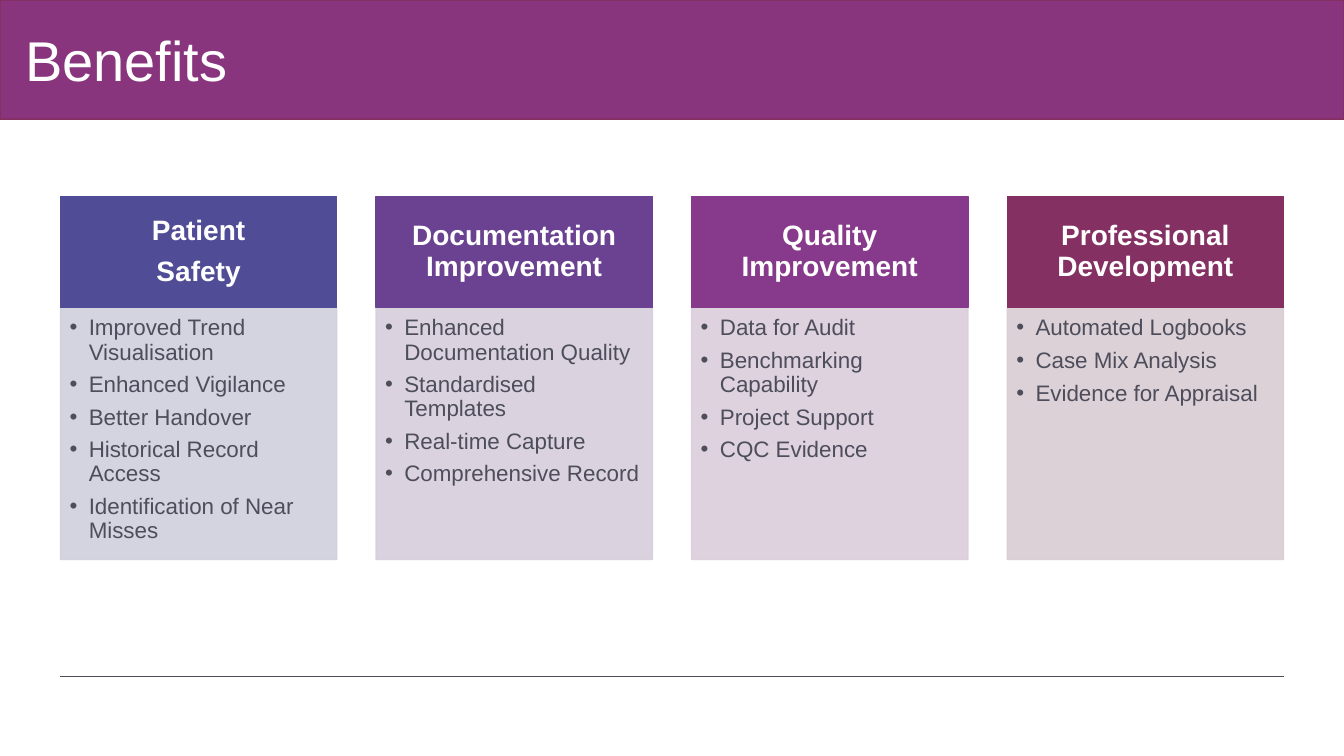
from lxml import etree
from pptx import Presentation
from pptx import util as u
from pptx.dml import color
from pptx.enum import shapes, text
from pptx.oxml import ns


class Theme:
    font = "Arial"
    title_size, heading_size, list_size = 40, 20, 16
    white, ink = "FFFFFF", "4D4D5B"
    banner, banner_edge = "89357E", "853063"
    list_opacity = 90


def paint(shape, fill, edge, insets, anchor, opacity=100):
    shape.fill.solid()
    shape.fill.fore_color.rgb = color.RGBColor.from_string(fill)
    shape.line.color.rgb = color.RGBColor.from_string(edge)
    shape.line.width = u.Pt(1)
    if opacity < 100:
        for tint in shape._element.spPr.iter(ns.qn("a:srgbClr")):
            etree.SubElement(tint, ns.qn("a:alpha"), val=str(opacity * 1000))
    frame = shape.text_frame
    frame.word_wrap = True
    frame.auto_size = text.MSO_AUTO_SIZE.NONE
    frame.vertical_anchor = anchor
    frame.margin_left, frame.margin_top, frame.margin_right, frame.margin_bottom = map(u.Inches, insets)


def write(frame, lines, size, ink, align, bold=False, spacing=0.9, after=0, bullet=False):
    for number, line in enumerate(lines):
        paragraph = frame.add_paragraph() if number else frame.paragraphs[0]
        if bullet:
            properties = paragraph._p.get_or_add_pPr()
            properties.set("marL", str(u.Inches(0.19)))
            properties.set("indent", str(-u.Inches(0.19)))
            etree.SubElement(properties, ns.qn("a:buChar"), char="•")
        paragraph.alignment = align
        paragraph.line_spacing = spacing
        paragraph.space_before = u.Pt(0)
        paragraph.space_after = u.Pt(after)
        run = paragraph.add_run()
        run.text = line
        run.font.name = Theme.font
        run.font.size = u.Pt(size)
        run.font.bold = bold
        run.font.color.rgb = color.RGBColor.from_string(ink)


columns = [
    (["Patient", "Safety"], "504C96", "D0D0DD",
     ["Improved Trend Visualisation", "Enhanced Vigilance", "Better Handover",
      "Historical Record Access", "Identification of Near Misses"]),
    (["Documentation Improvement"], "6A4291", "D6CFDC",
     ["Enhanced Documentation Quality", "Standardised Templates",
      "Real-time Capture", "Comprehensive Record"]),
    (["Quality Improvement"], "87398B", "DACEDA",
     ["Data for Audit", "Benchmarking Capability", "Project Support", "CQC Evidence"]),
    (["Professional Development"], "853063", "D9CDD3",
     ["Automated Logbooks", "Case Mix Analysis", "Evidence for Appraisal"]),
]

presentation = Presentation()
presentation.slide_width = u.Inches(13.33)
presentation.slide_height = u.Inches(7.5)
slide = presentation.slides.add_slide(presentation.slide_layouts.get_by_name("Comparison"))

title = slide.shapes.title
title.left, title.top = 0, 0
title.width, title.height = presentation.slide_width, u.Inches(1.18)
paint(title, Theme.banner, Theme.banner_edge, (0.25, 0.05, 0.1, 0.05), text.MSO_ANCHOR.MIDDLE)
write(title.text_frame, ["Benefits"], Theme.title_size, Theme.white, text.PP_ALIGN.LEFT, spacing=1.0)

margin = u.Inches(0.6)
column_width = u.Inches(2.74)
column_step = (presentation.slide_width - 2 * margin - column_width) // (len(columns) - 1)
heading_top, heading_height = u.Inches(1.95), u.Inches(1.1)
list_top, list_height = heading_top + heading_height, u.Inches(2.5)

bodies = [shape for shape in slide.placeholders if shape.placeholder_format.idx > 0]
for number, (body, (heading_lines, heading_fill, list_fill, items)) in enumerate(zip(bodies, columns)):
    left = margin + number * column_step
    heading = slide.shapes.add_shape(
        shapes.MSO_SHAPE.RECTANGLE, left, heading_top, column_width, heading_height)
    heading.shadow.inherit = False
    paint(heading, heading_fill, heading_fill, (0.16, 0.09, 0.16, 0.09), text.MSO_ANCHOR.MIDDLE)
    write(heading.text_frame, heading_lines, Theme.heading_size, Theme.white,
          text.PP_ALIGN.CENTER, bold=True, after=8)

    body.left, body.top, body.width, body.height = left, list_top, column_width, list_height
    paint(body, list_fill, list_fill, (0.09, 0.09, 0.12, 0.14), text.MSO_ANCHOR.TOP, Theme.list_opacity)
    write(body.text_frame, items, Theme.list_size, Theme.ink, text.PP_ALIGN.LEFT, after=6, bullet=True)

rule_top = u.Inches(6.71)
rule = slide.shapes.add_connector(
    shapes.MSO_CONNECTOR.STRAIGHT, margin, rule_top, presentation.slide_width - margin, rule_top)
rule.line.color.rgb = color.RGBColor.from_string(Theme.ink)
rule.line.width = u.Pt(0.25)
etree.SubElement(rule._element.spPr, ns.qn("a:effectLst"))

presentation.save("out.pptx")
